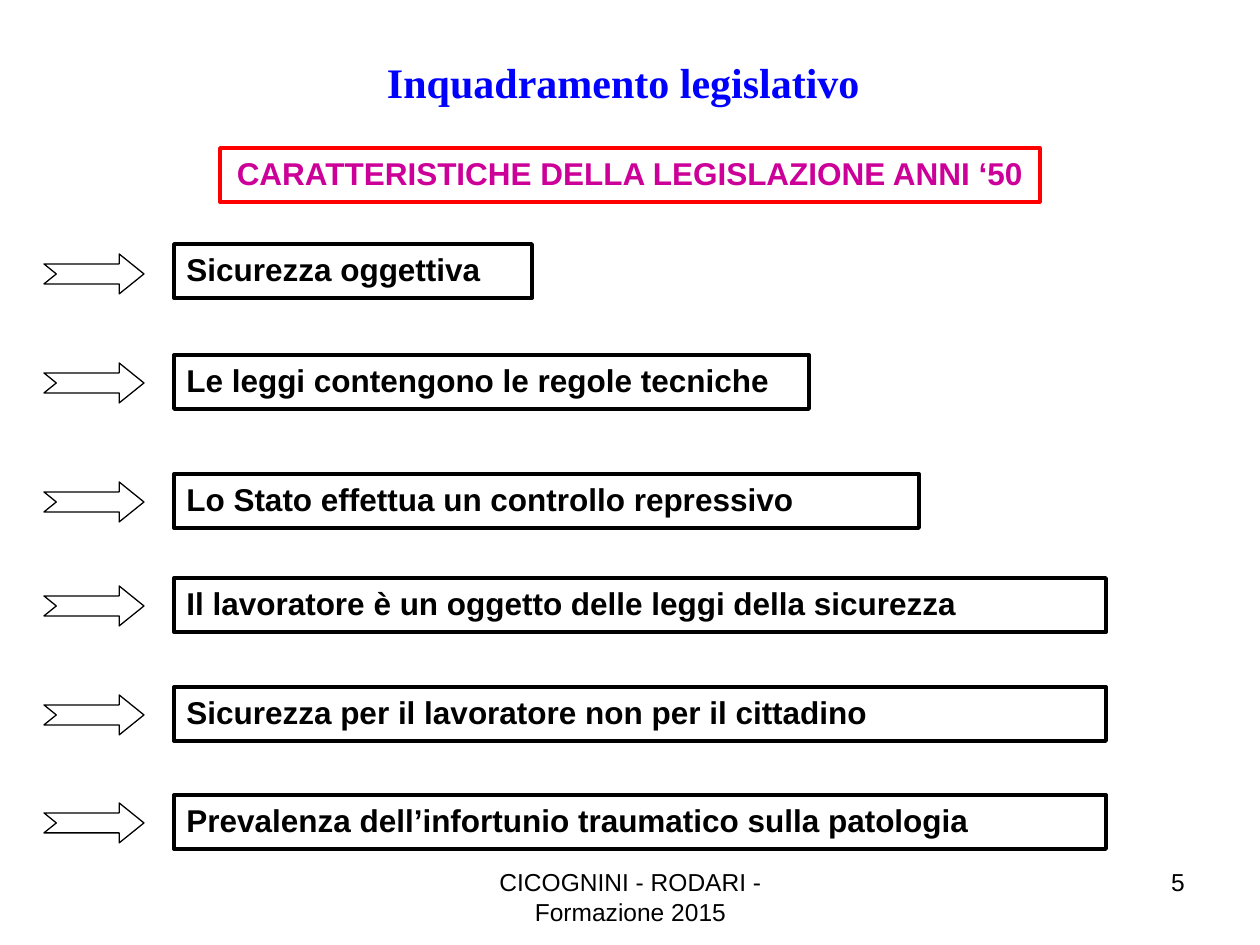
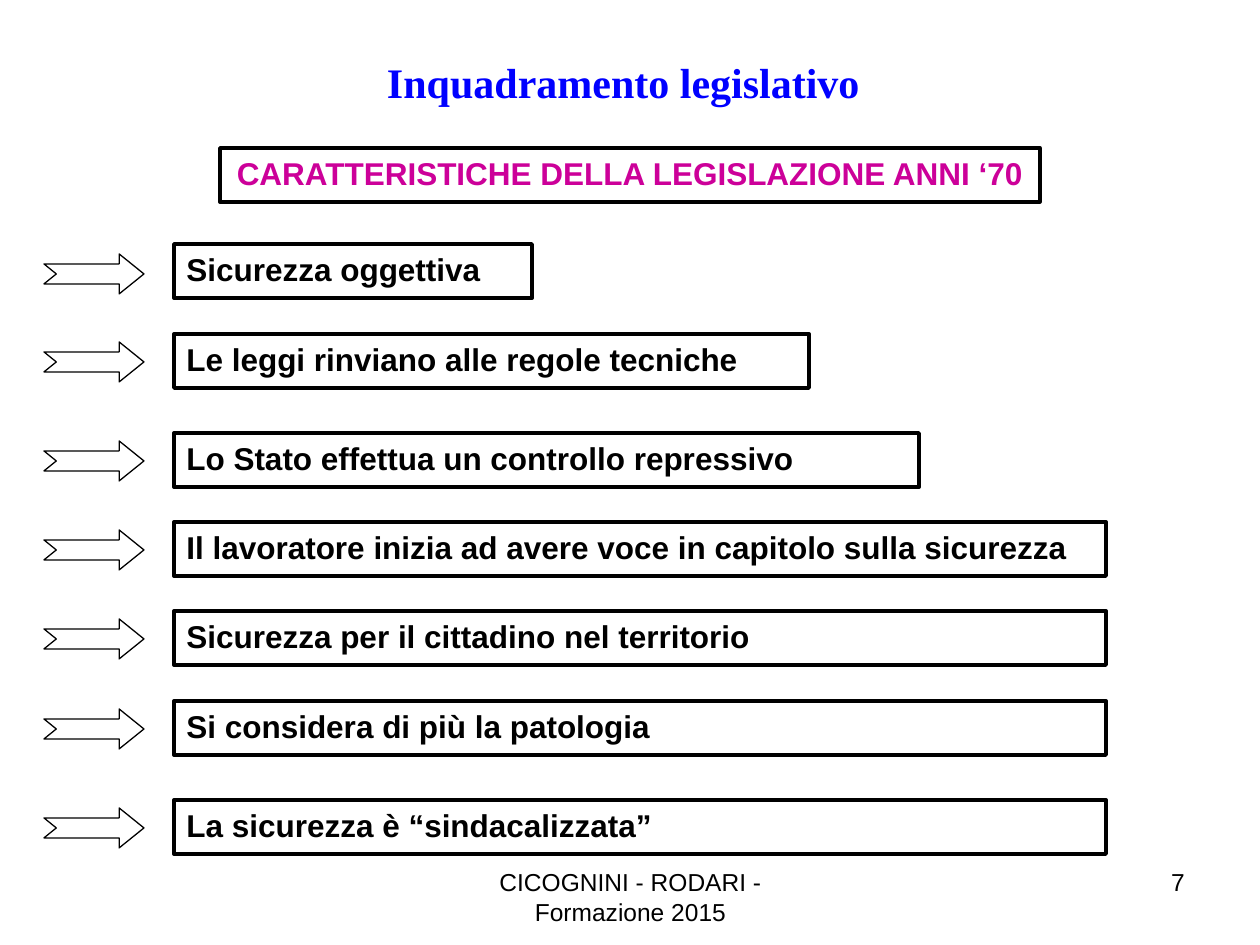
from dataclasses import dataclass

from pptx import Presentation
from pptx.dml.color import RGBColor
from pptx.enum.shapes import MSO_SHAPE
from pptx.enum.text import MSO_ANCHOR, PP_ALIGN
from pptx.util import Pt

TITLE = "Inquadramento legislativo "
FOOTER = "CICOGNINI - RODARI - Formazione 2015"

SLIDES = [
    {
        "number": "5",
        "heading": "CARATTERISTICHE DELLA LEGISLAZIONE ANNI ‘50",
        "heading_line": "FF0000",
        "points": [
            (244, "Sicurezza oggettiva"),
            (355, "Le leggi contengono le regole tecniche"),
            (474, "Lo Stato effettua un controllo repressivo"),
            (578, "Il lavoratore è un oggetto delle leggi della sicurezza"),
            (687, "Sicurezza per il lavoratore non per il cittadino"),
            (795, "Prevalenza dell’infortunio traumatico sulla patologia"),
        ],
    },
    {
        "number": "7",
        "heading": "CARATTERISTICHE DELLA LEGISLAZIONE ANNI ‘70",
        "heading_line": "000000",
        "points": [
            (244, "Sicurezza oggettiva"),
            (334, "Le leggi rinviano alle regole tecniche"),
            (433, "Lo Stato effettua un controllo repressivo"),
            (522, "Il lavoratore inizia ad avere voce in capitolo sulla sicurezza"),
            (611, "Sicurezza per il cittadino nel territorio"),
            (701, "Si considera di più la patologia"),
            (800, "La sicurezza è “sindacalizzata”"),
        ],
    },
]


@dataclass(frozen=True)
class Theme:
    black: str = "000000"
    white: str = "FFFFFF"
    title: str = "0000FF"
    heading: str = "CC0099"
    title_font: str = "Times New Roman"
    body_font: str = "Arial"
    title_size: int = 24
    body_size: int = 18
    footer_size: int = 14
    heading_border: float = 2
    point_border: float = 2.25
    arrow_border: float = 0.75


THEME = Theme()
PX = 914400 / 126
BOX_HEIGHT = 54
POINT_LEFT = 174
FIRST_WIDTHS = (358, 635, 745)
FULL_WIDTH = 932
ARROW_LEFT, ARROW_WIDTH, ARROW_HEIGHT = 44, 100, 40
FIRST_ARROW_DROP, ARROW_DROP = 10, 8


def emu(*lengths):
    return [round(length * PX) for length in lengths]


def write(shape, text, size, color, align, font=THEME.body_font, bold=True, wrap=True):
    frame = shape.text_frame
    frame.word_wrap = wrap
    frame.vertical_anchor = MSO_ANCHOR.TOP
    para = frame.paragraphs[0]
    para.text = text
    para.alignment = align
    para.font.name = font
    para.font.size = Pt(size)
    para.font.bold = bold
    para.font.color.rgb = RGBColor.from_string(color)


def add_text(slide, area, *args, **options):
    write(slide.shapes.add_textbox(*emu(*area)), *args, **options)


def add_outline(slide, kind, area, line_color, border):
    shape = slide.shapes.add_shape(kind, *emu(*area))
    shape.shadow.inherit = False
    shape.fill.background()
    shape.line.color.rgb = RGBColor.from_string(line_color)
    shape.line.width = Pt(border)
    return shape


def add_arrow(slide, top):
    area = (ARROW_LEFT, top, ARROW_WIDTH, ARROW_HEIGHT)
    arrow = add_outline(slide, MSO_SHAPE.NOTCHED_RIGHT_ARROW, area,
                        THEME.black, THEME.arrow_border)
    arrow.fill.solid()
    arrow.fill.fore_color.rgb = RGBColor.from_string(THEME.white)
    arrow.adjustments[0] = 0.5
    arrow.adjustments[1] = 0.62


def add_point(slide, index, top, text):
    add_arrow(slide, top + (ARROW_DROP if index else FIRST_ARROW_DROP))
    width = FIRST_WIDTHS[index] if index < len(FIRST_WIDTHS) else FULL_WIDTH
    box = add_outline(slide, MSO_SHAPE.RECTANGLE, (POINT_LEFT, top, width, BOX_HEIGHT),
                      THEME.black, THEME.point_border)
    write(box, text, THEME.body_size, THEME.black, PP_ALIGN.JUSTIFY)


def add_frame(slide, number):
    add_text(slide, (431, 861, 399, 66), FOOTER, THEME.footer_size, THEME.black,
             PP_ALIGN.CENTER, bold=False)
    add_text(slide, (903, 861, 294, 66), number, THEME.footer_size, THEME.black,
             PP_ALIGN.RIGHT, bold=False)
    add_text(slide, (197, 50, 863, 63), TITLE, THEME.title_size, THEME.title,
             PP_ALIGN.CENTER, font=THEME.title_font)


def build_slide(deck, content):
    slide = deck.slides.add_slide(deck.slide_layouts[6])
    add_frame(slide, content["number"])
    heading = add_outline(slide, MSO_SHAPE.RECTANGLE, (220, 148, 820, BOX_HEIGHT),
                          content["heading_line"], THEME.heading_border)
    write(heading, content["heading"], THEME.body_size, THEME.heading,
          PP_ALIGN.CENTER, wrap=False)
    for index, (top, text) in enumerate(content["points"]):
        add_point(slide, index, top, text)


def main():
    deck = Presentation()
    deck.slide_width, deck.slide_height = emu(1260, 945)
    for content in SLIDES:
        build_slide(deck, content)
    deck.save("out.pptx")


if __name__ == "__main__":
    main()
